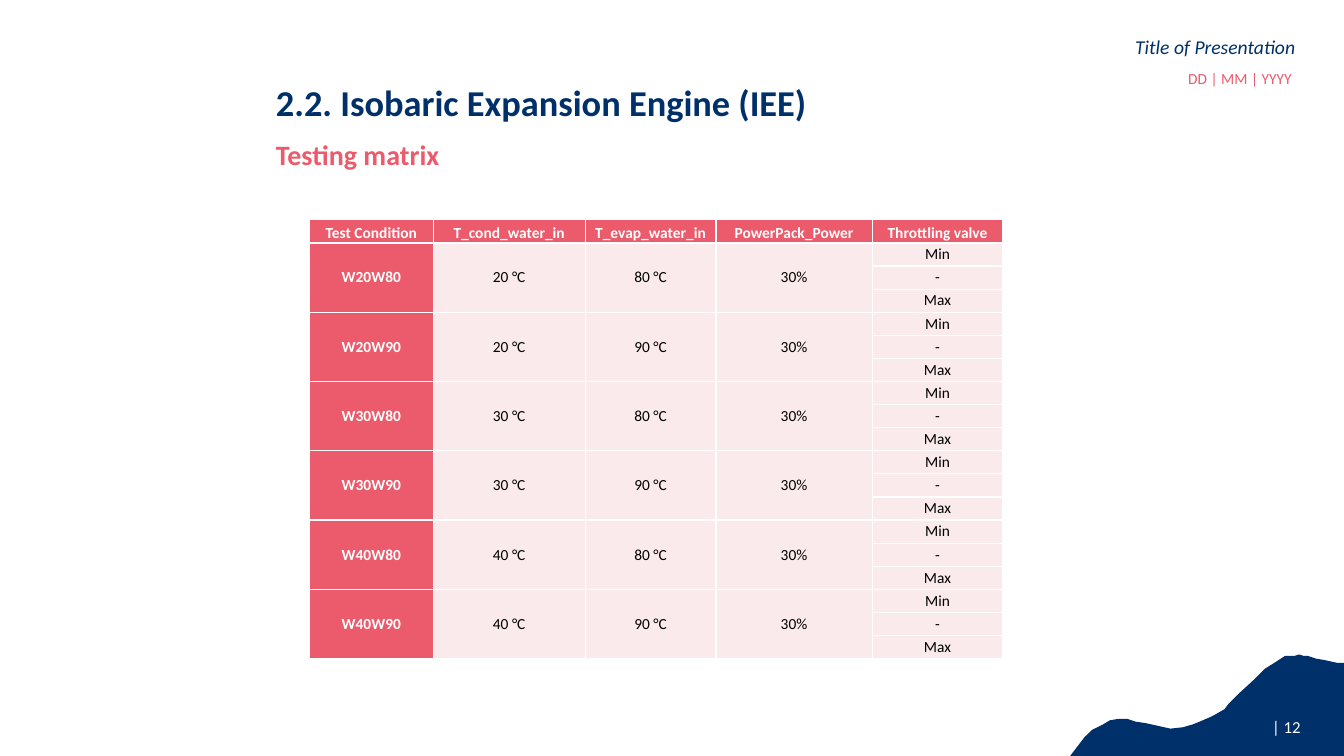
from lxml.etree import SubElement
from pptx import Presentation
from pptx.dml.color import RGBColor
from pptx.enum.text import MSO_ANCHOR, PP_ALIGN
from pptx.oxml.ns import qn
from pptx.util import Pt

COLORS = {"navy": "003069", "coral": "EB5B6B", "blush": "FBEAEB",
          "white": "FFFFFF", "black": "000000"}
HEADERS = ["Test Condition", "T_cond_water_in", "T_evap_water_in",
           "PowerPack_Power", "Throttling valve"]
COL_WIDTHS = [88.5, 108.5, 93.5, 111.5, 93.5]
ROW_HEIGHT = 16.52
VALVE_STEPS = ["Min", "-", "Max"]
CONDITIONS = [(cond, evap) for cond in (20, 30, 40) for evap in (80, 90)]
WAVE = [(771.8, 540), (960, 540), (960, 474.5), (954.7, 473.8), (946.1, 472.3),
        (939.6, 470.9), (933.8, 469.4), (931, 468.7), (928.1, 468), (925.2, 468.7),
        (920.9, 468.7), (918, 469.4), (911.5, 473), (903.6, 478.1), (897.1, 484.6),
        (884.9, 496.1), (877.7, 503.3), (874.8, 506.9), (867.6, 511.2), (864, 512.6),
        (856.8, 516.2), (851.8, 518.4), (845.3, 519.8), (835.9, 520.6), (817.9, 517),
        (810.7, 515.5), (805, 514.1), (799.2, 514.1), (793.4, 514.8), (787.7, 517.7),
        (779.8, 522), (775.4, 527), (764.6, 540)]


def rgb(name):
    """Return the palette colour of the given name."""
    return RGBColor.from_string(COLORS[name])


def write(tf, text, size, color, bold=False, italic=False, align=PP_ALIGN.LEFT):
    """Put one formatted paragraph in a text frame."""
    tf.text = text
    p = tf.paragraphs[0]
    p.alignment = align
    font = p.runs[0].font
    font.name, font.size = "Calibri", Pt(size)
    font.bold, font.italic = bold, italic
    font.color.rgb = rgb(color)


def add_text(slide, box, text, size, color, anchor=MSO_ANCHOR.TOP, **style):
    """Add a wrapping text box."""
    tf = slide.shapes.add_textbox(*map(Pt, box)).text_frame
    tf.word_wrap = True
    tf.vertical_anchor = anchor
    write(tf, text, size, color, **style)


def add_wave(slide):
    """Draw the navy wave in the bottom right corner."""
    builder = slide.shapes.build_freeform(*WAVE[0], scale=Pt(1))
    builder.add_line_segments(WAVE[1:], close=True)
    sp = builder.convert_to_shape()
    sp.shadow.inherit = False
    sp.fill.solid()
    sp.fill.fore_color.rgb = rgb("navy")
    sp.line.color.rgb = rgb("navy")
    sp.line.width = Pt(1)


def style_cell(cell, fill):
    """Give a cell white borders, no margins and a plain fill."""
    tc_pr = cell._tc.get_or_add_tcPr()
    for side in ("a:lnL", "a:lnR", "a:lnT", "a:lnB"):
        ln = SubElement(tc_pr, qn(side), w=str(Pt(1)))
        color = SubElement(SubElement(ln, qn("a:solidFill")), qn("a:srgbClr"))
        color.set("val", COLORS["white"])
    cell.fill.solid()
    cell.fill.fore_color.rgb = rgb(fill)
    cell.margin_left = cell.margin_right = cell.margin_top = cell.margin_bottom = 0


def fill_cell(cell, text, strong=False, anchor=MSO_ANCHOR.MIDDLE):
    """Write centred text in a table cell."""
    cell.vertical_anchor = anchor
    write(cell.text_frame, text, 11, "white" if strong else "black",
          bold=strong, align=PP_ALIGN.CENTER)


def add_matrix(slide, left, top):
    """Add the table with one block of valve steps per test condition."""
    steps = len(VALVE_STEPS)
    rows = 1 + steps * len(CONDITIONS)
    table = slide.shapes.add_table(rows, len(HEADERS), Pt(left), Pt(top),
                                   Pt(sum(COL_WIDTHS)), Pt(ROW_HEIGHT * rows)).table
    for column, width in zip(table.columns, COL_WIDTHS):
        column.width = Pt(width)
    for i, row in enumerate(table.rows):
        row.height = Pt(ROW_HEIGHT)
        for j, cell in enumerate(row.cells):
            style_cell(cell, "coral" if i == 0 or j == 0 else "blush")
    for j, header in enumerate(HEADERS):
        fill_cell(table.cell(0, j), header, True, MSO_ANCHOR.BOTTOM)
    for n, (cond, evap) in enumerate(CONDITIONS):
        first = 1 + n * steps
        values = [f"W{cond}W{evap}", f"{cond} °C", f"{evap} °C", "30%"]
        for j, value in enumerate(values):
            table.cell(first, j).merge(table.cell(first + steps - 1, j))
            fill_cell(table.cell(first, j), value, strong=j == 0)
        for k, step in enumerate(VALVE_STEPS):
            fill_cell(table.cell(first + k, len(values)), step)


def main():
    """Build the slide and save it."""
    prs = Presentation()
    prs.slide_width, prs.slide_height = Pt(960), Pt(540)
    slide = prs.slides.add_slide(prs.slide_layouts[6])
    add_text(slide, (611.3, 21.6, 321.1, 24.5), "Title of Presentation", 14, "navy",
             italic=True, align=PP_ALIGN.RIGHT)
    add_text(slide, (764.6, 46.1, 167.8, 20.9), "DD | MM | YYYY ", 11, "coral",
             align=PP_ALIGN.RIGHT)
    add_wave(slide)
    add_text(slide, (822.2, 508.3, 116.6, 21.6), " | 12 ", 12, "white",
             align=PP_ALIGN.RIGHT)
    add_text(slide, (190, 54, 585.4, 38.9), "2.2. Isobaric Expansion Engine (IEE)",
             26, "navy", bold=True)
    add_text(slide, (190, 93.6, 411.8, 33.8), "Testing matrix", 20, "coral",
             anchor=MSO_ANCHOR.MIDDLE, bold=True)
    add_matrix(slide, 221, 157)
    prs.save("out.pptx")


if __name__ == "__main__":
    main()
